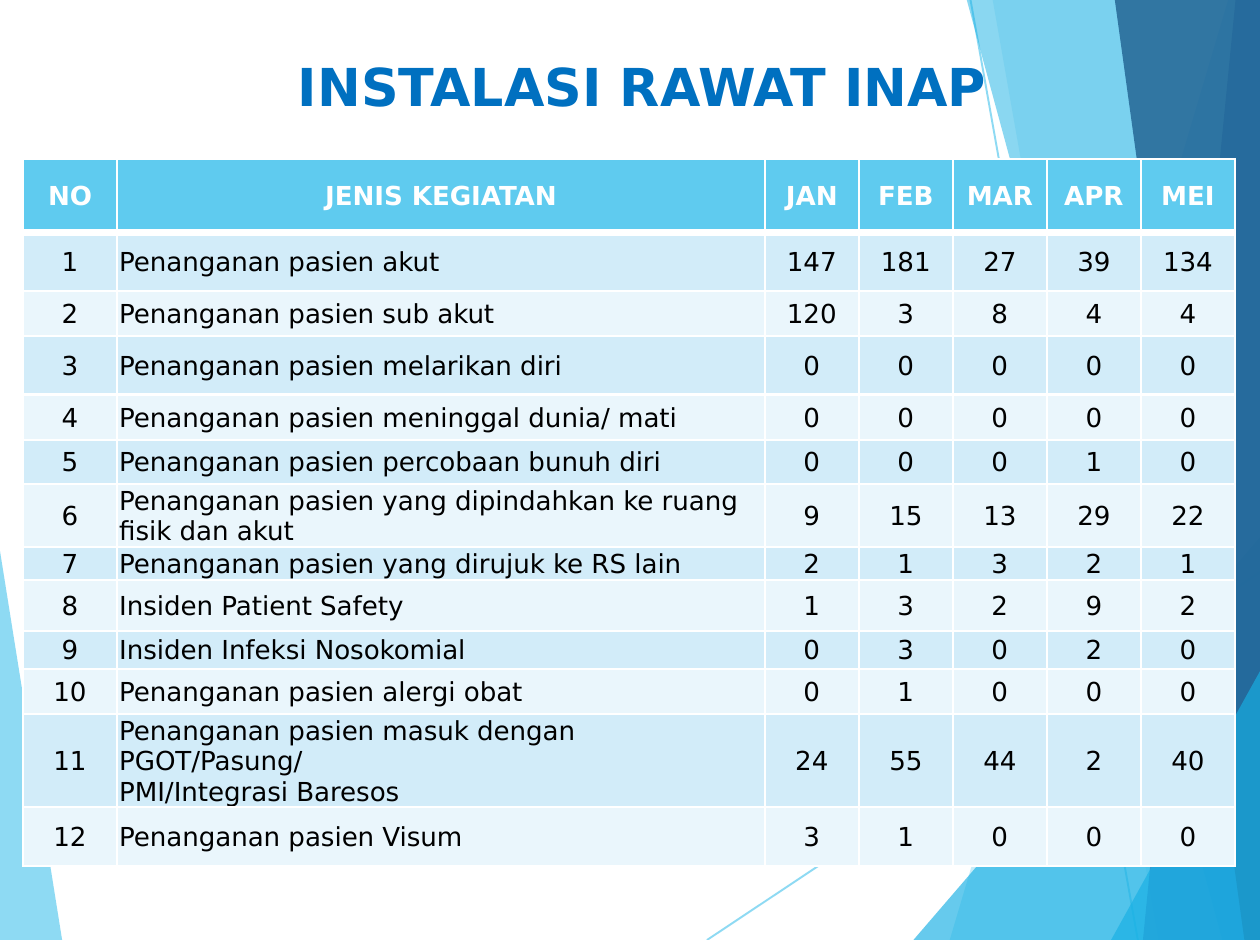
from dataclasses import dataclass

import lxml.etree
import pptx
import pptx.dml.color
import pptx.enum.shapes
import pptx.enum.text
import pptx.oxml.ns
import pptx.util

Cm = pptx.util.Cm
Pt = pptx.util.Pt
qn = pptx.oxml.ns.qn

WIDTH, HEIGHT = 17.02, 12.7
FONT = "DejaVu Sans"
COLORS = {
    "sky": "5FCBEF",
    "cyan": "17B0E4",
    "blue": "2E83C3",
    "navy": "226292",
    "title": "0070C0",
    "band_dark": "D2ECF9",
    "band_light": "EAF6FC",
    "white": "FFFFFF",
    "black": "000000",
}


@dataclass
class Facet:
    points: list[tuple[float, float]]
    color: str
    opacity: int


@dataclass
class Ray:
    start: tuple[float, float]
    end: tuple[float, float]


@dataclass
class Activity:
    label: str
    counts: tuple[int, ...]
    height: float


def right_band(top: float, bottom: float) -> list[tuple[float, float]]:
    """Points of a full-height band that reaches the right slide edge."""
    return [(top, 0), (bottom, HEIGHT), (WIDTH, HEIGHT), (WIDTH, 0)]


def corner(left: float, top: float) -> list[tuple[float, float]]:
    """Points of a triangle in the bottom right corner."""
    return [(left, HEIGHT), (WIDTH, top), (WIDTH, HEIGHT)]


LEFT_FACET = Facet([(0, 7.44), (0.84, HEIGHT), (0, HEIGHT)], "sky", 70)
RAYS = [
    Ray((9.55, HEIGHT), (WIDTH, 7.73)),
    Ray((13.11, 0), (15.37, HEIGHT)),
]
RIGHT_FACETS = [
    Facet(right_band(16.59, 12.83), "sky", 36),
    Facet(right_band(13.41, 15.65), "sky", 20),
    Facet(corner(12.34, 7.26), "cyan", 66),
    Facet(right_band(13.06, 16.51), "cyan", 50),
    Facet(right_band(16.69, 15.44), "blue", 70),
    Facet(right_band(15.06, 16.81), "navy", 82),
    Facet(corner(15.01, 9.07), "cyan", 66),
]

HEADERS = ("NO", "JENIS KEGIATAN", "JAN", "FEB", "MAR", "APR", "MEI")
HEADER_HEIGHT = 0.99
COLUMN_WIDTHS = (1.27, 8.75) + (1.27,) * 5
ACTIVITIES = [
    Activity("Penanganan pasien akut", (147, 181, 27, 39, 134), 0.79),
    Activity("Penanganan pasien sub akut", (120, 3, 8, 4, 4), 0.61),
    Activity("Penanganan pasien melarikan diri", (0, 0, 0, 0, 0), 0.79),
    Activity("Penanganan pasien meninggal dunia/ mati", (0, 0, 0, 0, 0), 0.61),
    Activity("Penanganan pasien percobaan bunuh diri", (0, 0, 0, 1, 0), 0.6),
    Activity("Penanganan pasien yang dipindahkan ke ruang fisik dan akut",
             (9, 15, 13, 29, 22), 0.79),
    Activity("Penanganan pasien yang dirujuk ke RS lain", (2, 1, 3, 2, 1), 0.41),
    Activity("Insiden Patient Safety", (1, 3, 2, 9, 2), 0.69),
    Activity("Insiden Infeksi Nosokomial", (0, 3, 0, 2, 0), 0.51),
    Activity("Penanganan pasien alergi obat", (0, 1, 0, 0, 0), 0.61),
    Activity("Penanganan pasien masuk dengan PGOT/Pasung/\nPMI/Integrasi Baresos",
             (24, 55, 44, 2, 40), 0.99),
    Activity("Penanganan pasien Visum", (3, 1, 0, 0, 0), 0.79),
]


def rgb(color: str) -> pptx.dml.color.RGBColor:
    return pptx.dml.color.RGBColor.from_string(COLORS[color])


def set_opacity(shape, percent: int) -> None:
    for color in shape.element.iter(qn("a:srgbClr")):
        lxml.etree.SubElement(color, qn("a:alpha"), val=str(percent * 1000))


def draw_facet(slide, facet: Facet) -> None:
    points = [(Cm(x), Cm(y)) for x, y in facet.points]
    builder = slide.shapes.build_freeform(*points[0])
    builder.add_line_segments(points[1:], close=True)
    shape = builder.convert_to_shape()
    shape.shadow.inherit = False
    shape.fill.solid()
    shape.fill.fore_color.rgb = rgb(facet.color)
    shape.line.fill.background()
    set_opacity(shape, facet.opacity)


def draw_ray(slide, ray: Ray) -> None:
    ends = [Cm(value) for value in ray.start + ray.end]
    line = slide.shapes.add_connector(
        pptx.enum.shapes.MSO_CONNECTOR.STRAIGHT, *ends)
    line.line.color.rgb = rgb("sky")
    line.line.width = Pt(0.75)
    set_opacity(line, 70)
    lxml.etree.SubElement(line.element.spPr, qn("a:effectLst"))


def add_run(paragraph, text: str, size: float, color: str, bold: bool) -> None:
    run = paragraph.add_run()
    run.text = text
    run.font.name = FONT
    run.font.size = Pt(size)
    run.font.bold = bold
    run.font.color.rgb = rgb(color)


def draw_title(slide, text: str) -> None:
    title = slide.shapes.title
    title.left, title.top = Cm(1.12), Cm(0.56)
    title.width, title.height = Cm(15.11), Cm(1.35)
    frame = title.text_frame
    frame.auto_size = pptx.enum.text.MSO_AUTO_SIZE.NONE
    frame.vertical_anchor = pptx.enum.text.MSO_ANCHOR.TOP
    frame.margin_top = Cm(0.17)
    paragraph = frame.paragraphs[0]
    paragraph.alignment = pptx.enum.text.PP_ALIGN.CENTER
    add_run(paragraph, text, 20, "title", True)
    # The title belongs in front of the background facets.
    title.element.getparent().append(title.element)


def set_borders(cell, top: float, bottom: float) -> None:
    properties = cell._tc.get_or_add_tcPr()
    sides = (("L", 1), ("R", 1), ("T", top), ("B", bottom))
    for position, (side, width) in enumerate(sides):
        border = lxml.etree.Element(qn(f"a:ln{side}"), w=str(Pt(width)))
        fill = lxml.etree.SubElement(border, qn("a:solidFill"))
        lxml.etree.SubElement(fill, qn("a:srgbClr"), val=COLORS["white"])
        properties.insert(position, border)


def fill_cell(cell, text: str, row: int, centered: bool) -> None:
    header = row == 0
    band = "band_dark" if row % 2 else "band_light"
    cell.fill.solid()
    cell.fill.fore_color.rgb = rgb("sky" if header else band)
    cell.margin_left = cell.margin_right = cell.margin_top = Cm(0.03)
    cell.margin_bottom = 0
    cell.vertical_anchor = pptx.enum.text.MSO_ANCHOR.MIDDLE
    paragraph = cell.text_frame.paragraphs[0]
    align = pptx.enum.text.PP_ALIGN
    paragraph.alignment = align.CENTER if centered else align.LEFT
    for index, part in enumerate(text.split("\n")):
        if index:
            paragraph.add_line_break()
        add_run(paragraph, part, 10, "white" if header else "black", header)
    set_borders(cell, top=3 if row == 1 else 1, bottom=3 if header else 1)


def draw_activity_table(slide) -> None:
    heights = [HEADER_HEIGHT] + [activity.height for activity in ACTIVITIES]
    rows = [HEADERS] + [(number, activity.label, *activity.counts)
                        for number, activity in enumerate(ACTIVITIES, 1)]
    table = slide.shapes.add_table(
        len(rows), len(HEADERS), Cm(0.31), Cm(2.15),
        Cm(sum(COLUMN_WIDTHS)), Cm(sum(heights))).table
    table.horz_banding = False
    for column, width in zip(table.columns, COLUMN_WIDTHS):
        column.width = Cm(width)
    for r, (values, height) in enumerate(zip(rows, heights)):
        table.rows[r].height = Cm(height)
        for c, value in enumerate(values):
            fill_cell(table.cell(r, c), str(value), r, r == 0 or c != 1)


def main() -> None:
    deck = pptx.Presentation()
    deck.slide_width, deck.slide_height = Cm(WIDTH), Cm(HEIGHT)
    slide = deck.slides.add_slide(deck.slide_layouts[5])
    draw_facet(slide, LEFT_FACET)
    for ray in RAYS:
        draw_ray(slide, ray)
    for facet in RIGHT_FACETS:
        draw_facet(slide, facet)
    draw_title(slide, "INSTALASI RAWAT INAP")
    draw_activity_table(slide)
    deck.save("out.pptx")


if __name__ == "__main__":
    main()
